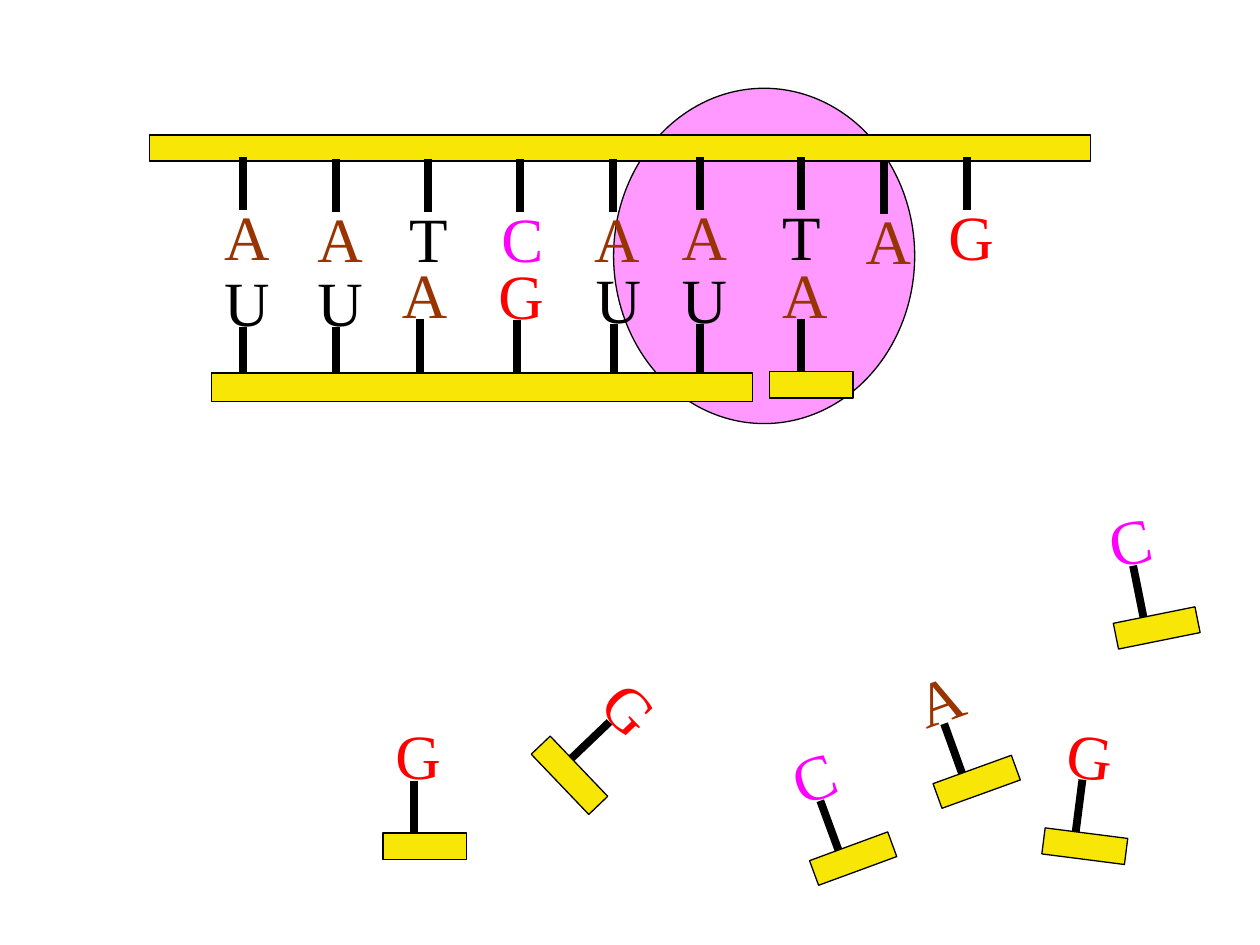
import math

import pptx
import pptx.dml.color
import pptx.enum.shapes
import pptx.enum.text
import pptx.oxml
import pptx.oxml.ns
import pptx.util
from lxml import etree

Cm = pptx.util.Cm
Pt = pptx.util.Pt
Shape = pptx.enum.shapes.MSO_SHAPE

BASE_COLOURS = {"A": "993300", "T": "000000", "U": "000000",
                "C": "FF00FF", "G": "FF0000"}

# All measures below are in centimetres.
LETTER_WIDTH, LETTER_HEIGHT = 1.68, 1.75
BACKBONE_WIDTH, BACKBONE_HEIGHT = 1.68, 0.53
STEM_X = 0.62                # from the left of the letter box
STEM_ABOVE = (-0.69, 0.38)   # from the top of the letter box
STEM_BELOW = (1.41, 2.47)


def colour(hex_code):
    return pptx.dml.color.RGBColor.from_string(hex_code)


class Diagram:
    """Holds the style and the slide being drawn on."""
    font = "Times New Roman"
    letter_size = 36
    backbone_fill = "F8E706"
    ink = "000000"
    outline_width = 0.75
    stem_width = 4.5

    def __init__(self, slide):
        self.slide = slide

    def group(self):
        return self.slide.shapes.add_group_shape().shapes

    def shape(self, shapes, preset, left, top, width, height, fill, angle=0):
        shape = shapes.add_shape(preset, Cm(left), Cm(top), Cm(width), Cm(height))
        shape.shadow.inherit = False
        shape.fill.solid()
        shape.fill.fore_color.rgb = colour(fill)
        shape.line.color.rgb = colour(self.ink)
        shape.line.width = Pt(self.outline_width)
        shape.rotation = angle

    def backbone(self, shapes, left, top, width=BACKBONE_WIDTH,
                 height=BACKBONE_HEIGHT, angle=0):
        self.shape(shapes, Shape.RECTANGLE, left, top, width, height,
                   self.backbone_fill, angle)

    def letter(self, shapes, base, left, top, angle=0):
        box = shapes.add_textbox(Cm(left), Cm(top), Cm(LETTER_WIDTH), Cm(LETTER_HEIGHT))
        box.rotation = angle
        frame = box.text_frame
        frame.word_wrap = True
        frame.auto_size = pptx.enum.text.MSO_AUTO_SIZE.SHAPE_TO_FIT_TEXT
        paragraph = frame.paragraphs[0]
        qn = pptx.oxml.ns.qn
        space = etree.SubElement(paragraph._p.get_or_add_pPr(), qn("a:spcBef"))
        etree.SubElement(space, qn("a:spcPct")).set("val", "50000")
        run = paragraph.add_run()
        run.text = base
        run.font.name = self.font
        run.font.size = Pt(self.letter_size)
        run.font.color.rgb = colour(BASE_COLOURS[base])

    def stem(self, shapes, start, end):
        line = shapes.add_connector(pptx.enum.shapes.MSO_CONNECTOR.STRAIGHT,
                                    *(Cm(value) for value in (*start, *end)))
        line.line.color.rgb = colour(self.ink)
        line.line.width = Pt(self.stem_width)
        etree.SubElement(line._element.spPr, pptx.oxml.ns.qn("a:effectLst"))

    def base(self, shapes, base, left, top, stem):
        """Upright letter with a stem spanning the given offsets from its top."""
        self.letter(shapes, base, left, top)
        x = left + STEM_X
        self.stem(shapes, (x, top + stem[0]), (x, top + stem[1]))

    def nucleotide(self, base, x, y, angle=0):
        """Letter, stem and backbone, turned about the backbone's centre (x, y)."""
        shapes = self.group()
        cos, sin = math.cos(math.radians(angle)), math.sin(math.radians(angle))

        def turned(dx, dy):
            return x + dx * cos - dy * sin, y + dx * sin + dy * cos

        centre_y = STEM_BELOW[1] + BACKBONE_HEIGHT / 2
        letter_x, letter_y = turned(0, LETTER_HEIGHT / 2 - centre_y)
        self.letter(shapes, base, letter_x - LETTER_WIDTH / 2,
                    letter_y - LETTER_HEIGHT / 2, angle)
        self.stem(shapes, *(turned(STEM_X - LETTER_WIDTH / 2, offset - centre_y)
                            for offset in STEM_BELOW))
        self.backbone(shapes, x - BACKBONE_WIDTH / 2, y - BACKBONE_HEIGHT / 2,
                      angle=angle)


DNA_BASES = [("A", 4.27, 3.86), ("A", 6.15, 3.89), ("T", 8.0, 3.89),
             ("C", 9.86, 3.89), ("A", 11.73, 3.89), ("A", 13.49, 3.86),
             ("T", 15.52, 3.86), ("A", 17.2, 3.94), ("G", 18.87, 3.86)]
RNA_BASES = [("U", 4.27, 5.18), ("U", 6.15, 5.18), ("A", 7.85, 5.03),
             ("G", 9.8, 5.05), ("U", 11.76, 5.13), ("U", 13.49, 5.13)]
FREE_NUCLEOTIDES = [("G", 8.56, 17.06, 0), ("C", 23.32, 12.66, -11.4),
                    ("G", 11.48, 15.63, 46.3), ("A", 19.69, 15.76, -19.9),
                    ("C", 17.2, 17.31, -20.2), ("G", 21.87, 17.06, 7.3)]


def main():
    deck = pptx.Presentation()
    deck.slide_width, deck.slide_height = Cm(25.4), Cm(19.05)
    diagram = Diagram(deck.slides.add_slide(deck.slide_layouts[6]))

    # Polymerase behind the strands
    diagram.shape(diagram.slide.shapes, Shape.OVAL, 12.37, 1.78, 6.07, 6.76, "FF99FF")

    dna = diagram.group()
    diagram.backbone(dna, 3.02, 2.72, width=18.97)
    for base, left, top in DNA_BASES:
        diagram.base(dna, base, left, top, STEM_ABOVE)

    for nucleotide in FREE_NUCLEOTIDES:
        diagram.nucleotide(*nucleotide)

    rna = diagram.group()
    for base, left, top in RNA_BASES:
        diagram.base(rna, base, left, top, STEM_BELOW)
    diagram.backbone(rna, 4.27, 7.52, width=10.9, height=0.58)

    # Nucleotide about to join the RNA strand
    diagram.nucleotide("A", 16.36, 7.76)

    deck.save("out.pptx")


if __name__ == "__main__":
    main()
